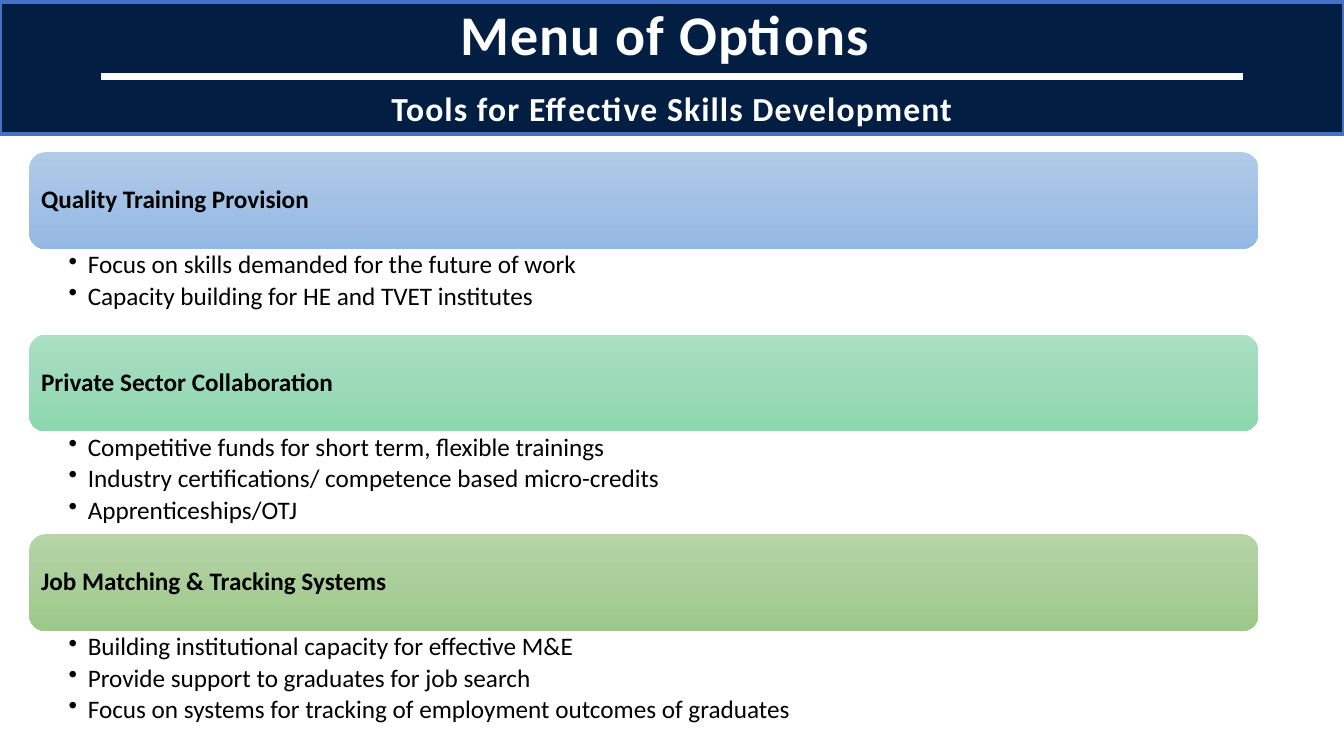
from copy import deepcopy
from dataclasses import dataclass

from pptx import Presentation
from pptx.dml.color import RGBColor
from pptx.enum.shapes import MSO_CONNECTOR as Connector, MSO_SHAPE as Preset
from pptx.enum.text import MSO_ANCHOR as Anchor, MSO_AUTO_SIZE as AutoSize, PP_ALIGN as Align
from pptx.oxml.ns import qn
from pptx.oxml.xmlchemy import OxmlElement
from pptx.shapes.autoshape import Shape
from pptx.slide import Slide
from pptx.text.text import TextFrame, _Paragraph as Paragraph, _Run as Run
from pptx.util import Inches, Pt


@dataclass(frozen=True)
class Theme:
    font: str = "Calibri"
    navy: str = "021F43"
    border: str = "4472C4"
    white: str = "FFFFFF"
    black: str = "000000"
    title_size: float = 40
    subtitle_size: float = 24
    body_size: float = 18
    letter_spacing: float = 0.8


@dataclass(frozen=True)
class Section:
    heading: str
    gradient: tuple[str, str, str]
    bullets: tuple[str, ...]
    body_height: float


THEME = Theme()
LEFT, WIDTH = 0.29, 12.19
FIRST_TOP, HEADING_HEIGHT = 1.51, 0.96
BULLET_INDENT = 0.19

SECTIONS = (
    Section(
        "Quality Training Provision",
        ("B1CBE9", "A3C1E5", "93B9E4"),
        (
            "Focus on skills demanded for the future of work",
            "Capacity building for HE and TVET institutes",
        ),
        0.85,
    ),
    Section(
        "Private Sector Collaboration",
        ("ABE0C3", "9DDAB9", "8CD8AF"),
        (
            "Competitive funds for short term, flexible trainings",
            "Industry certifications/ competence based micro-credits",
            "Apprenticeships/OTJ",
        ),
        1.02,
    ),
    Section(
        "Job Matching & Tracking Systems",
        ("B5D5A7", "AACE9A", "9CC987"),
        (
            "Building institutional capacity for effective M&E",
            "Provide support to graduates for job search",
            "Focus on systems for tracking of employment outcomes of graduates",
        ),
        1.02,
    ),
)


def color(value: str) -> RGBColor:
    return RGBColor.from_string(value)


def add_run(paragraph: Paragraph, text: str, size: float, text_color: str, bold: bool = False) -> Run:
    run = paragraph.add_run()
    run.text = text
    run.font.name = THEME.font
    run.font.size = Pt(size)
    run.font.bold = bold
    run.font.color.rgb = color(text_color)
    return run


def set_frame(frame: TextFrame, anchor: Anchor, left: float, top: float, right: float, bottom: float) -> None:
    frame.word_wrap = True
    frame.auto_size = AutoSize.NONE
    frame.vertical_anchor = anchor
    frame.margin_left, frame.margin_top = Inches(left), Inches(top)
    frame.margin_right, frame.margin_bottom = Inches(right), Inches(bottom)


def next_paragraph(frame: TextFrame, index: int) -> Paragraph:
    return frame.add_paragraph() if index else frame.paragraphs[0]


def format_title(title: Shape) -> None:
    title.left, title.top = Inches(0), Inches(0.02)
    title.width, title.height = Inches(13.33), Inches(1.31)
    title.fill.solid()
    title.fill.fore_color.rgb = color(THEME.navy)
    title.line.color.rgb = color(THEME.border)
    title.line.width = Pt(2.25)
    set_frame(title.text_frame, Anchor.MIDDLE, 0.07, 0.04, 0.07, 0.04)
    lines = (
        ("Menu of Options ", THEME.title_size, 0.9),
        ("Tools for Effective Skills Development", THEME.subtitle_size, 1.5),
    )
    for index, (text, size, spacing) in enumerate(lines):
        paragraph = next_paragraph(title.text_frame, index)
        paragraph.alignment = Align.CENTER
        paragraph.line_spacing = spacing
        paragraph.space_before = Pt(0)
        run = add_run(paragraph, text, size, THEME.white, bold=True)
        run.font._element.set("spc", str(round(THEME.letter_spacing * 100)))


def add_title_rule(slide: Slide) -> None:
    rule = slide.shapes.add_connector(
        Connector.STRAIGHT, Inches(1), Inches(0.76), Inches(12.33), Inches(0.76)
    )
    rule.line.color.rgb = color(THEME.white)
    rule.line.width = Pt(5)
    rule._element.spPr.append(OxmlElement("a:effectLst"))


def fill_gradient(shape: Shape, colors: tuple[str, str, str]) -> None:
    shape.fill.gradient()
    shape.fill.gradient_angle = 270
    stop_list = shape._element.spPr.find(qn("a:gradFill")).find(qn("a:gsLst"))
    stop_list.insert(1, deepcopy(stop_list[0]))
    for stop, position, value in zip(shape.fill.gradient_stops, (0, 0.5, 1), colors):
        stop.position = position
        stop.color.rgb = color(value)


def add_heading(slide: Slide, section: Section, top: float) -> None:
    bar = slide.shapes.add_shape(
        Preset.ROUNDED_RECTANGLE, Inches(LEFT), Inches(top), Inches(WIDTH), Inches(HEADING_HEIGHT)
    )
    bar.shadow.inherit = False
    bar.line.fill.background()
    fill_gradient(bar, section.gradient)
    set_frame(bar.text_frame, Anchor.MIDDLE, 0.07, 0.07, 0.07, 0.07)
    paragraph = bar.text_frame.paragraphs[0]
    paragraph.alignment = Align.LEFT
    paragraph.line_spacing = 0.9
    add_run(paragraph, section.heading, THEME.body_size, THEME.black, bold=True)


def set_bullet(paragraph: Paragraph) -> None:
    properties = paragraph._p.get_or_add_pPr()
    properties.set("marL", str(Inches(BULLET_INDENT)))
    properties.set("indent", str(-Inches(BULLET_INDENT)))
    bullet = OxmlElement("a:buChar")
    bullet.set("char", "•")
    properties.append(bullet)


def add_bullets(slide: Slide, section: Section, top: float) -> None:
    box = slide.shapes.add_textbox(
        Inches(LEFT), Inches(top), Inches(WIDTH), Inches(section.body_height)
    )
    set_frame(box.text_frame, Anchor.TOP, 0.39, 0.03, 0.14, 0.03)
    for index, text in enumerate(section.bullets):
        paragraph = next_paragraph(box.text_frame, index)
        paragraph.level = 1
        paragraph.line_spacing = 0.9
        paragraph.space_after = Pt(3)
        set_bullet(paragraph)
        add_run(paragraph, text, THEME.body_size, THEME.black)


def main() -> None:
    presentation = Presentation()
    presentation.slide_width, presentation.slide_height = Inches(13.33), Inches(7.5)
    slide = presentation.slides.add_slide(presentation.slide_layouts.get_by_name("Title Only"))
    format_title(slide.shapes.title)
    add_title_rule(slide)
    top = FIRST_TOP
    for section in SECTIONS:
        add_heading(slide, section, top)
        add_bullets(slide, section, top + HEADING_HEIGHT)
        top += HEADING_HEIGHT + section.body_height
    presentation.save("out.pptx")


if __name__ == "__main__":
    main()
